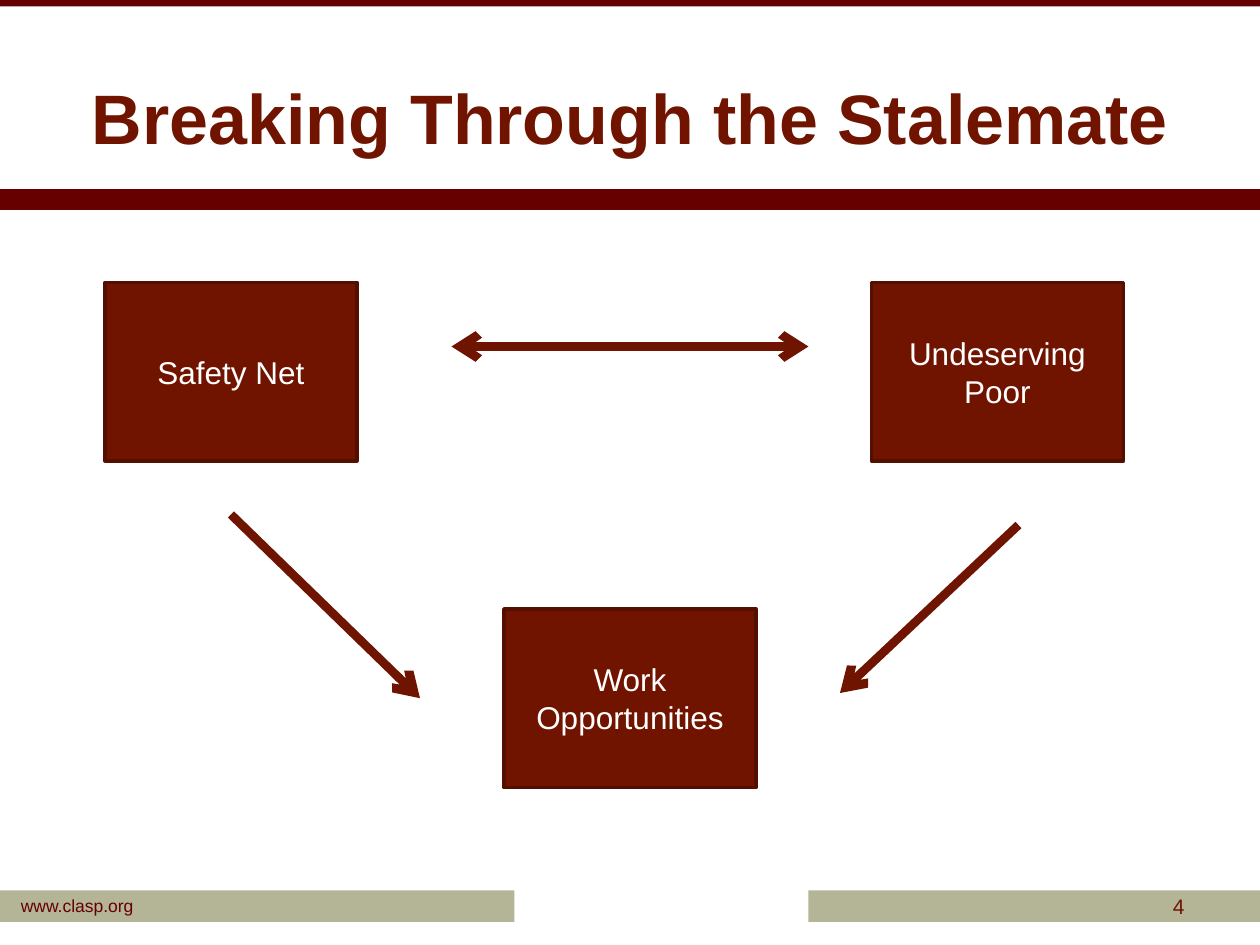
from lxml.etree import SubElement
from pptx import Presentation
from pptx.dml.color import RGBColor
from pptx.enum.shapes import MSO_CONNECTOR as Link, MSO_SHAPE as Form
from pptx.enum.text import MSO_ANCHOR as Anchor, PP_ALIGN as Align
from pptx.oxml.ns import qn
from pptx.util import Inches, Pt

WHITE = RGBColor(0xFF, 0xFF, 0xFF)
WINE = RGBColor(0x66, 0x00, 0x00)
RUST = RGBColor(0x70, 0x14, 0x00)
EDGE = RGBColor(0x53, 0x0F, 0x00)
ARROW = RGBColor(0x6E, 0x14, 0x00)
SAGE = RGBColor(0xB4, 0xB4, 0x96)

COLS, ROWS = 120, 90
UNIT = Inches(10) // COLS


def grid(box, *cells):
    left, top = box[:2]
    x, y, *size = cells
    return [round(n * UNIT) for n in (left + x, top + y, *size)]


def write(shape, text, size, color, align, bold=False, inset=None):
    frame = shape.text_frame
    look = {"word_wrap": True, "vertical_anchor": Anchor.MIDDLE}
    if inset is not None:
        for side in ("left", "top", "right", "bottom"):
            look[f"margin_{side}"] = inset
    for key, value in look.items():
        setattr(frame, key, value)
    frame.text = text
    para = frame.paragraphs[0]
    para.alignment = align
    font = para.runs[0].font
    for key, value in {"name": "Arial", "size": Pt(size), "bold": bold}.items():
        setattr(font, key, value)
    font.color.rgb = color


def block(slide, place, fill, edge=None):
    shape = slide.shapes.add_shape(Form.RECTANGLE, *place)
    shape.shadow.inherit = False
    shape.fill.solid()
    shape.fill.fore_color.rgb = fill
    if edge is None:
        shape.line.fill.background()
    else:
        shape.line.color.rgb = edge
        shape.line.width = Pt(2)
    return shape


def arrow(slide, start, end, tips):
    link = slide.shapes.add_connector(Link.STRAIGHT, *start, *end)
    link.line.color.rgb = ARROW
    link.line.width = Pt(5)
    line = link.line._get_or_add_ln()
    for tip in tips:
        SubElement(line, qn(f"a:{tip}"), type="arrow")
    SubElement(link._element.spPr, qn("a:effectLst"))


def header(slide, box):
    wide = box[2]
    for top, high in ((0, 0.6), (18, 2)):
        block(slide, grid(box, 0, top, wide, high), WINE)
    title = slide.shapes.title
    place = grid(box, 6, 3.6, wide - 12, 15)
    for key, value in zip(("left", "top", "width", "height"), place):
        setattr(title, key, value)
    write(title, "Breaking Through the Stalemate", 40, RUST, Align.CENTER, True)


def footer(slide, box):
    wide, high = box[2:]
    for left, right in ((0, 49), (77, wide)):
        block(slide, grid(box, left, 0, right - left, high), SAGE)
    site = slide.shapes.add_textbox(*grid(box, 2, 0.4, 16.3, 2))
    write(site, "www.clasp.org", 10, WINE, Align.LEFT, inset=0)
    page = slide.shapes.add_textbox(*grid(box, 86, -0.8, 28, 4.5))
    write(page, "4", 12, RUST, Align.RIGHT)


def diagram(slide, box):
    ideas = (("Safety Net", 10, 0), ("Undeserving Poor", 83, 0),
             ("Work Opportunities", 48, 31.1))
    for text, left, top in ideas:
        shape = block(slide, grid(box, left, top, 24, 17), RUST, EDGE)
        write(shape, text, 18, WHITE, Align.CENTER)
    one, both = ("tailEnd",), ("headEnd", "tailEnd")
    for start, end, tips in (((43, 6.1), (77, 6.1), both),
                             ((22, 22.1), (40, 39.6), one),
                             ((97, 23.1), (80, 39.1), one)):
        arrow(slide, grid(box, *start), grid(box, *end), tips)


def main():
    deck = Presentation()
    deck.slide_width, deck.slide_height = COLS * UNIT, ROWS * UNIT
    slide = deck.slides.add_slide(deck.slide_layouts[5])
    header(slide, (0, 0, COLS, 20))
    diagram(slide, (0, 26.9, COLS, 48.1))
    footer(slide, (0, 84.8, COLS, 3))
    deck.save("out.pptx")


if __name__ == "__main__":
    main()
